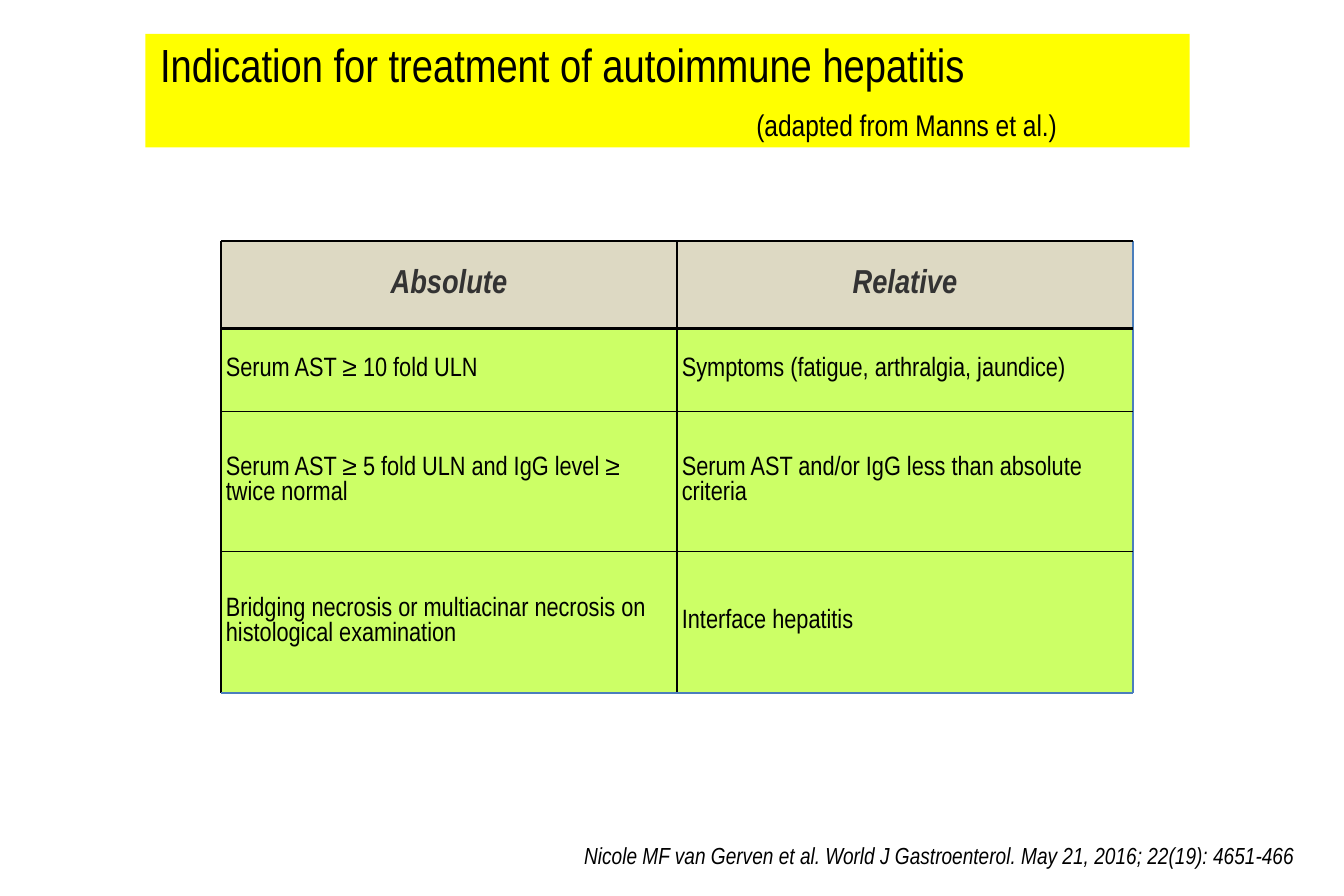
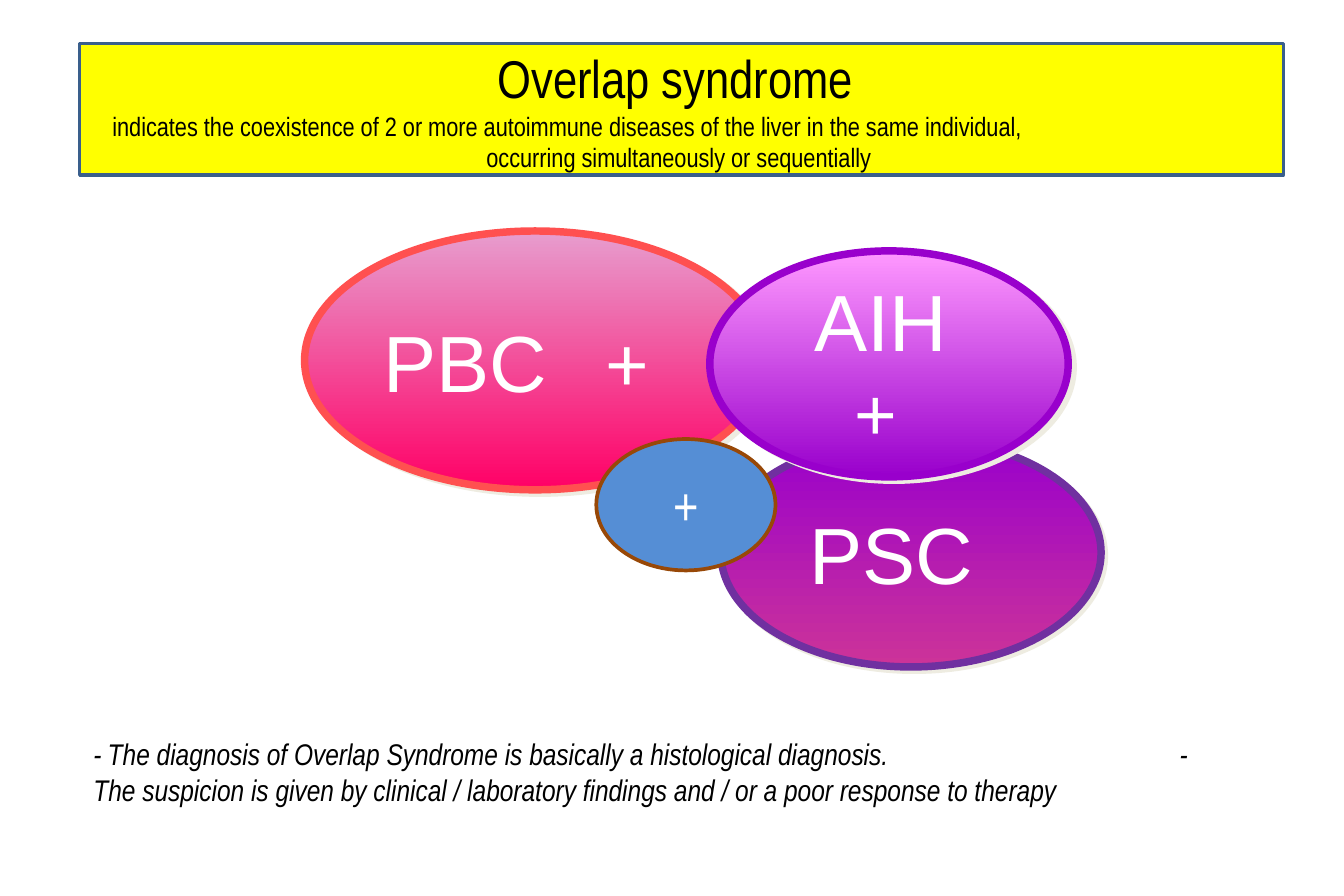
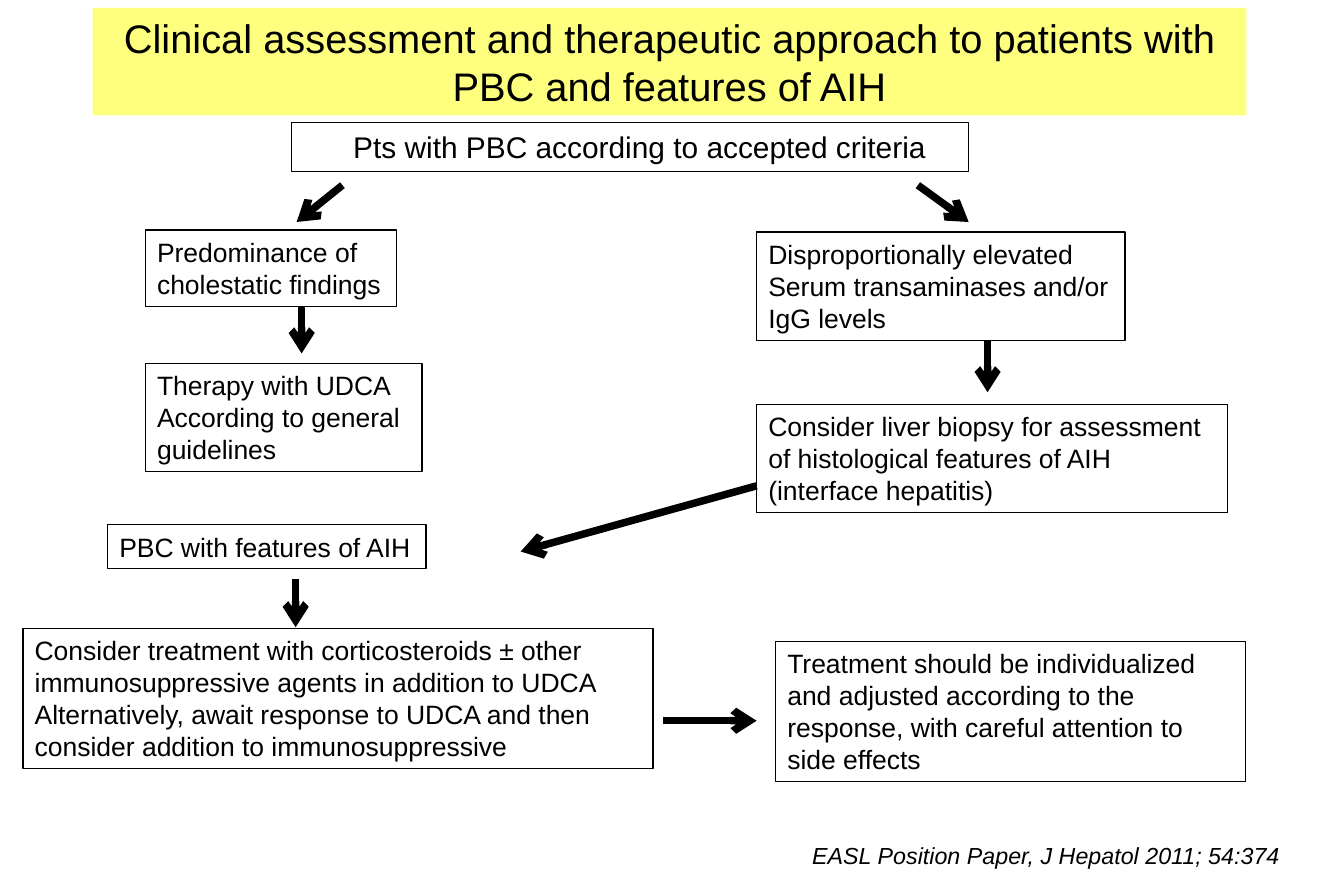
from lxml.etree import SubElement
from pptx import Presentation
from pptx.dml.color import RGBColor
from pptx.enum.shapes import MSO_CONNECTOR as Connector, MSO_SHAPE as Preset
from pptx.enum.text import MSO_ANCHOR as Anchor, PP_ALIGN as Align
from pptx.oxml.ns import qn
from pptx.util import Pt

# Shared look: 120 px to the inch
PX = 7620
SLIDE_SIZE = (1350, 900)
NARROW, ARIAL, CALIBRI = "Arial Narrow", "Arial", "Calibri"
PLAIN_TABLE = "{2D5ABB26-0587-4C30-8999-92F81FD0307C}"
BLACK = RGBColor(0x00, 0x00, 0x00)
WHITE = RGBColor(0xFF, 0xFF, 0xFF)
YELLOW = RGBColor(0xFF, 0xFF, 0x00)
BANNER_EDGE = RGBColor(0x3A, 0x5F, 0x8C)
HEADER_TEXT = RGBColor(0x33, 0x33, 0x33)
HEADER_FILL = RGBColor(0xDD, 0xD9, 0xC3)
BODY_FILL = RGBColor(0xCC, 0xFF, 0x66)
TABLE_BLUE = RGBColor(0x4B, 0x7E, 0xBC)
SHADOW = RGBColor(0xEE, 0xEC, 0xE1)
CORAL = RGBColor(0xFF, 0x50, 0x50)
PINK = RGBColor(0xE7, 0x9D, 0xCE)
ROSE = RGBColor(0xFF, 0x00, 0x66)
VIOLET = RGBColor(0x99, 0x00, 0xCC)
MAGENTA = RGBColor(0xCC, 0x33, 0x99)
PURPLE = RGBColor(0x70, 0x30, 0xA0)
LILAC = RGBColor(0xFF, 0x99, 0xFF)
BLUE = RGBColor(0x55, 0x8E, 0xD5)
BROWN = RGBColor(0x98, 0x48, 0x07)

# Slide 1 content
INDICATION_TITLE = [
    ("Indication for treatment of autoimmune hepatitis", dict(size=28, indent=3)),
    ("(adapted from Manns et al.)", dict(size=18, indent=602, before=9)),
]
INDICATIONS = [
    ("Absolute", "Relative"),
    ("Serum AST ≥ 10 fold ULN", "Symptoms (fatigue, arthralgia, jaundice)"),
    ("Serum AST ≥ 5 fold ULN and IgG level ≥ twice normal",
     "Serum AST and/or IgG less than absolute criteria"),
    ("Bridging necrosis or multiacinar necrosis on histological examination",
     "Interface hepatitis"),
]
TABLE_PLACE = (222, 242)
COLUMN_WIDTH = 458
ROW_HEIGHTS = (88, 83, 141, 142)
# colour and width (pt) of the rules, top to bottom and left to right
ROW_RULES = [(BLACK, 1.5), (BLACK, 1.5), (BLACK, 0.75), (BLACK, 0.75),
             (TABLE_BLUE, 0.75)]
COLUMN_RULES = [(BLACK, 0.75), (BLACK, 0.75), (TABLE_BLUE, 0.75)]
INDICATION_SOURCE = ("Nicole MF van Gerven et al. World J Gastroenterol. "
                     "May 21, 2016; 22(19): 4651-466")

# Slide 2 content
OVERLAP_TITLE = [
    ("Overlap syndrome", dict(size=32, align=Align.CENTER, right=12)),
    ("indicates the coexistence of 2 or more autoimmune diseases of the liver "
     "in the same individual,", dict(indent=21)),
    ("occurring simultaneously or sequentially",
     dict(align=Align.CENTER, right=5)),
]
# place, gradient, edge, shadow distance (pt) and angle, text
DISEASES = [
    ((306, 232, 463, 260), (PINK, ROSE), CORAL, (3.6, 34), ["PBC"]),
    ((724, 440, 382, 230), (VIOLET, MAGENTA), PURPLE, (2.8, 45),
     [("PSC", dict(indent=21))]),
    ((713, 252, 360, 227), (LILAC, VIOLET), VIOLET, (3.6, 34),
     [("AIH", dict(indent=41)), ("+", dict(size=44, indent=81))]),
]
DIAGNOSIS = [
    ("- The diagnosis of Overlap Syndrome is basically a histological "
     "diagnosis.\t-", dict(tab=1091)),
    "The suspicion is given by clinical / laboratory findings and / or a poor "
    "response to therapy",
]

# Slide 3 content
ASSESSMENT_TITLE = ("Clinical assessment and therapeutic approach to patients "
                    "with PBC and features of AIH")
# place, wrap, paragraphs
STEPS = [
    ((293, 123, 680, 49), True,
     [("Pts with PBC according to accepted criteria", dict(size=18, indent=50))]),
    ((146, 231, 252, 77), False, ["Predominance of", "cholestatic findings"]),
    ((760, 233, 370, 109), False,
     ["Disproportionally elevated", "Serum transaminases and/or", "IgG levels"]),
    ((146, 365, 278, 109), False,
     ["Therapy with UDCA", "According to general", "guidelines"]),
    ((760, 406, 473, 109), True,
     ["Consider liver biopsy for assessment of histological features of AIH "
      "(interface hepatitis)"]),
    ((23, 631, 633, 141), True,
     ["Consider treatment with corticosteroids ± other immunosuppressive agents "
      "in addition to UDCA",
      "Alternatively, await response to UDCA and then consider addition to "
      "immunosuppressive"]),
    ((108, 527, 320, 44), False, ["PBC with features of AIH"]),
    ((779, 644, 472, 141), True,
     ["Treatment should be individualized and adjusted according to the "
      "response, with careful attention to side effects"]),
]
# from x, y to x, y
ARROWS = [
    (344, 186, 298, 223), (922, 186, 973, 223), (303, 308, 303, 355),
    (992, 342, 992, 394), (760, 488, 523, 554), (297, 582, 297, 630),
    (666, 724, 760, 724),
]
ASSESSMENT_SOURCE = "EASL Position Paper, J Hepatol 2011; 54:374"


def emu(lengths):
    return [length * PX for length in lengths]


def write_text(frame, paragraphs, wrap=True, anchor=Anchor.TOP, **shared):
    """Fill a text frame; an item is a text or (text, format changes)."""
    frame.word_wrap = wrap
    frame.vertical_anchor = anchor
    for index, item in enumerate(paragraphs):
        text, changes = (item, {}) if isinstance(item, str) else item
        style = {**shared, **changes}
        paragraph = frame.add_paragraph() if index else frame.paragraphs[0]
        paragraph.alignment = style.get("align", Align.LEFT)
        if "before" in style:
            paragraph.space_before = Pt(style["before"])
        properties = paragraph._p.get_or_add_pPr()
        for key, attribute in (("indent", "marL"), ("right", "marR")):
            if key in style:
                properties.set(attribute, str(style[key] * PX))
        if "tab" in style:
            tabs = SubElement(properties, qn("a:tabLst"))
            SubElement(tabs, qn("a:tab"), pos=str(style["tab"] * PX), algn="l")
        run = paragraph.add_run()
        run.text = text
        font = run.font
        font.name = style["font"]
        font.size = Pt(style["size"])
        font.bold = style.get("bold", False)
        font.italic = style.get("italic", False)
        font.color.rgb = style.get("color", BLACK)


def add_box(slide, place, preset=Preset.RECTANGLE, fill=None, edge=None, width=0.75):
    """Add a shape; fill is None, a colour or a pair of gradient colours."""
    shape = slide.shapes.add_shape(preset, *emu(place))
    shape.shadow.inherit = False
    if fill is None:
        shape.fill.background()
    elif isinstance(fill, RGBColor):
        shape.fill.solid()
        shape.fill.fore_color.rgb = fill
    else:
        shape.fill.gradient()
        shape.fill.gradient_angle = 270
        for stop, color in zip(shape.fill.gradient_stops, fill):
            stop.color.rgb = color
    if edge is None:
        shape.line.fill.background()
    else:
        shape.line.color.rgb = edge
        shape.line.width = Pt(width)
    return shape


def add_text(slide, place, paragraphs, **style):
    write_text(slide.shapes.add_textbox(*emu(place)).text_frame, paragraphs, **style)


def add_banner(slide, place, paragraphs, edge=None, **style):
    banner = add_box(slide, place, fill=YELLOW, edge=edge, width=2)
    write_text(banner.text_frame, paragraphs, anchor=Anchor.MIDDLE, **style)
    return banner


def add_source(slide, left, text, font):
    add_text(slide, (left, 839, SLIDE_SIZE[0] - left - 14, 41), [text],
             font=font, size=14, italic=True)


def add_shadow(shape, distance, angle):
    effects = shape._element.spPr.find(qn("a:effectLst"))
    shadow = SubElement(effects, qn("a:outerShdw"), blurRad="0",
                        dist=str(Pt(distance)), dir=str(angle * 60000),
                        algn="ctr", rotWithShape="0")
    SubElement(shadow, qn("a:srgbClr"), val=str(SHADOW))


def add_line(slide, ends, color=BLACK, width=4.5, head=False):
    line = slide.shapes.add_connector(Connector.STRAIGHT, *emu(ends))
    line.line.color.rgb = color
    line.line.width = Pt(width)
    if head:
        SubElement(line.line._get_or_add_ln(), qn("a:tailEnd"), type="arrow")
    SubElement(line._element.spPr, qn("a:effectLst"))


def add_indications(slide):
    left, top = TABLE_PLACE
    rows, columns = len(INDICATIONS), len(INDICATIONS[0])
    width, height = COLUMN_WIDTH * columns, sum(ROW_HEIGHTS)
    frame = slide.shapes.add_table(rows, columns, *emu((left, top, width, height)))
    table = frame.table
    table.first_row = table.horz_banding = False
    table._tbl.tblPr.find(qn("a:tableStyleId")).text = PLAIN_TABLE
    for column in table.columns:
        column.width = COLUMN_WIDTH * PX
    for r, texts in enumerate(INDICATIONS):
        table.rows[r].height = ROW_HEIGHTS[r] * PX
        for c, text in enumerate(texts):
            cell = table.cell(r, c)
            cell.margin_left = cell.margin_right = 5 * PX
            cell.margin_top = cell.margin_bottom = 5 * PX
            cell.vertical_anchor = Anchor.MIDDLE
            cell.fill.solid()
            cell.fill.fore_color.rgb = BODY_FILL if r else HEADER_FILL
            style = (dict(size=16) if r else
                     dict(size=20, bold=True, italic=True, color=HEADER_TEXT,
                          align=Align.CENTER))
            write_text(cell.text_frame, [text], anchor=Anchor.MIDDLE,
                       font=NARROW, **style)
    # Rules over the cell edges
    for c, rule in enumerate(COLUMN_RULES):
        x = left + c * COLUMN_WIDTH
        add_line(slide, (x, top, x, top + height), *rule)
    for r, rule in enumerate(ROW_RULES):
        y = top + sum(ROW_HEIGHTS[:r])
        add_line(slide, (left, y, left + width, y), *rule)


def build_indication(slide):
    add_indications(slide)
    add_source(slide, 575, INDICATION_SOURCE, NARROW)
    banner = add_banner(slide, (146, 34, 1049, 114), INDICATION_TITLE, font=NARROW)
    banner.text_frame.margin_bottom = 9 * PX


def build_overlap(slide):
    for place, gradient, edge, shadow, paragraphs in DISEASES:
        ellipse = add_box(slide, place, Preset.OVAL, gradient, edge, 4.5)
        add_shadow(ellipse, *shadow)
        write_text(ellipse.text_frame, paragraphs, anchor=Anchor.MIDDLE,
                   font=ARIAL, size=48, color=WHITE)
    plus = dict(anchor=Anchor.MIDDLE, color=WHITE, align=Align.CENTER)
    add_text(slide, (570, 301, 120, 120), ["+"], font=CALIBRI, size=48, **plus)
    center = add_box(slide, (599, 441, 180, 132), Preset.OVAL, BLUE, BROWN, 2.25)
    write_text(center.text_frame, ["+"], font=NARROW, size=32, **plus)
    add_text(slide, (82, 733, 1126, 85), DIAGNOSIS, font=NARROW, size=18, italic=True)
    add_banner(slide, (80, 44, 1209, 132), OVERLAP_TITLE, BANNER_EDGE,
               font=NARROW, size=16)


def build_assessment(slide):
    for place, wrap, paragraphs in STEPS:
        step = add_box(slide, place, edge=BLACK)
        write_text(step.text_frame, paragraphs, wrap=wrap, font=ARIAL, size=16)
    for ends in ARROWS:
        add_line(slide, ends, head=True)
    add_source(slide, 804, ASSESSMENT_SOURCE, ARIAL)
    banner = add_banner(slide, (93, 8, 1159, 108), [ASSESSMENT_TITLE],
                        font=ARIAL, size=24, align=Align.CENTER)
    color = banner._element.spPr.find(qn("a:solidFill"))[0]
    SubElement(color, qn("a:alpha"), val="50000")


def main():
    presentation = Presentation()
    presentation.slide_width, presentation.slide_height = emu(SLIDE_SIZE)
    for build in (build_indication, build_overlap, build_assessment):
        build(presentation.slides.add_slide(presentation.slide_layouts[6]))
    presentation.save("out.pptx")


if __name__ == "__main__":
    main()
